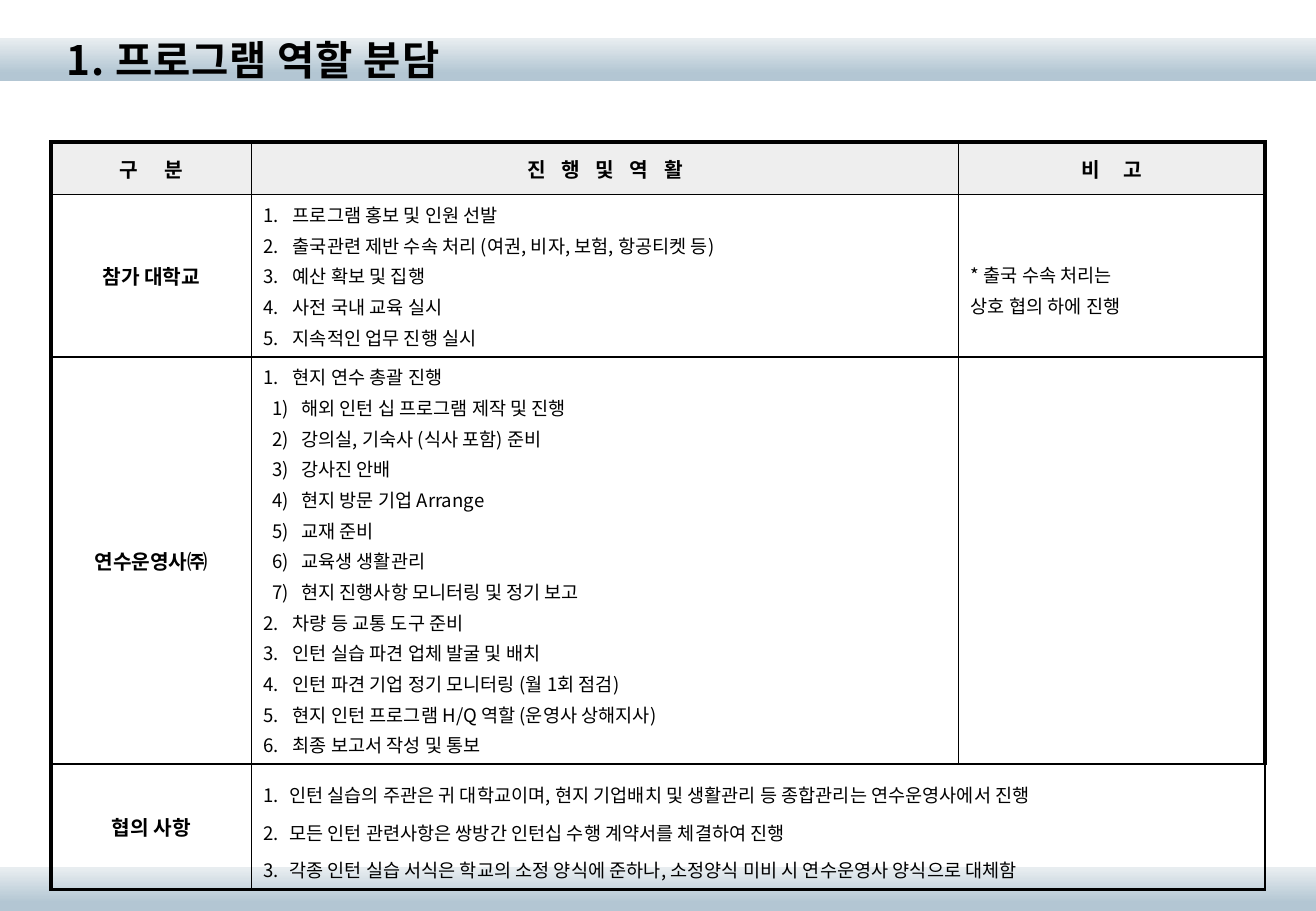
from lxml.etree import SubElement
from pptx import Presentation
from pptx.dml.color import RGBColor
from pptx.enum.shapes import MSO_SHAPE
from pptx.enum.text import MSO_ANCHOR, PP_ALIGN
from pptx.oxml.ns import qn
from pptx.util import Inches, Pt

FONT = "Noto Sans CJK KR"
COLORS = {"text": "000000", "header": "EEEEEE", "band_dark": "B3C6D3", "band_light": "E8EDF0"}
THIN, THICK = Pt(1), Pt(2.25)


def format_runs(paragraph, size, bold=False, spacing=0):
    """Style every run; spacing is the extra gap after each letter in points."""
    for run in paragraph.runs:
        run.font.size = Pt(size)
        run.font.bold = bold
        run.font.name = FONT
        run.font.color.rgb = RGBColor.from_string(COLORS["text"])
        properties = run.font._element
        SubElement(properties, qn("a:ea")).set("typeface", FONT)
        if spacing:
            properties.set("spc", str(round(spacing * 100)))


def number_paragraph(paragraph, number, style, left, hanging):
    properties = paragraph._p.get_or_add_pPr()
    properties.set("marL", str(Inches(left + hanging)))
    properties.set("indent", str(-Inches(hanging)))
    SubElement(properties, qn("a:buFont")).set("typeface", FONT)
    bullet = SubElement(properties, qn("a:buAutoNum"))
    bullet.set("type", style)
    bullet.set("startAt", str(number))


presentation = Presentation()
presentation.slide_width, presentation.slide_height = Inches(10.83), Inches(7.5)
slide = presentation.slides.add_slide(presentation.slide_layouts[6])

# Bands across the top and the foot
band_height = Inches(0.36)
for top in (Inches(0.31), presentation.slide_height - band_height):
    band = slide.shapes.add_shape(MSO_SHAPE.RECTANGLE, 0, top, presentation.slide_width, band_height)
    band.shadow.inherit = False
    band.line.fill.background()
    band.fill.gradient()
    band.fill.gradient_angle = 90
    for stop, position, color in zip(band.fill.gradient_stops, (0.19, 0.98), ("band_dark", "band_light")):
        stop.position = position
        stop.color.rgb = RGBColor.from_string(COLORS[color])

# Table frame
column_widths = (1.65, 5.82, 2.52)
row_heights = (0.43, 1.34, 3.35, 1.02)
table = slide.shapes.add_table(
    len(row_heights), len(column_widths), Inches(0.42), Inches(1.17),
    Inches(sum(column_widths)), Inches(sum(row_heights))).table
table.first_row = table.horz_banding = False
for column, width in zip(table.columns, column_widths):
    column.width = Inches(width)
for row, height in zip(table.rows, row_heights):
    row.height = Inches(height)

last_row, last_column = len(row_heights) - 1, len(column_widths) - 1
for row in range(last_row + 1):
    for column in range(last_column + 1):
        cell = table.cell(row, column)
        cell.vertical_anchor = MSO_ANCHOR.MIDDLE
        outer_sides = {"a:lnL": column == 0, "a:lnR": column == last_column,
                       "a:lnT": row == 0, "a:lnB": row == last_row}
        for side, is_outer in outer_sides.items():
            border = SubElement(cell._tc.get_or_add_tcPr(), qn(side), w=str(THICK if is_outer else THIN))
            SubElement(SubElement(border, qn("a:solidFill")), qn("a:srgbClr")).set("val", COLORS["text"])
        if row == 0:
            cell.fill.solid()
            cell.fill.fore_color.rgb = RGBColor.from_string(COLORS["header"])
        else:
            cell.fill.background()
table.cell(last_row, 1).merge(table.cell(last_row, last_column))

# Column and row headings: row, column, text, letter spacing
headings = [
    (0, 0, "구 분", 6.5), (0, 1, "진 행 및 역 활", 3.3), (0, 2, "비 고", 5.4),
    (1, 0, "참가 대학교", 0), (2, 0, "연수운영사㈜", 0), (3, 0, "협의 사항", 0),
]
for row, column, text, spacing in headings:
    paragraph = table.cell(row, column).text_frame.paragraphs[0]
    paragraph.text = text
    paragraph.alignment = PP_ALIGN.CENTER
    format_runs(paragraph, 12, True, spacing)

# Duties: a nested list holds the steps of the item before it
university_duties = [
    "프로그램 홍보 및 인원 선발",
    "출국관련 제반 수속 처리 (여권, 비자, 보험, 항공티켓 등)",
    "예산 확보 및 집행",
    "사전 국내 교육 실시",
    "지속적인 업무 진행 실시",
]
company_duties = [
    "현지 연수 총괄 진행",
    ["해외 인턴 십 프로그램 제작 및 진행", "강의실, 기숙사 (식사 포함) 준비", "강사진 안배",
     "현지 방문 기업 Arrange", "교재 준비", "교육생 생활관리", "현지 진행사항 모니터링 및 정기 보고"],
    "차량 등 교통 도구 준비",
    "인턴 실습 파견 업체 발굴 및 배치",
    "인턴 파견 기업 정기 모니터링 (월 1회 점검)",
    "현지 인턴 프로그램 H/Q 역할 (운영사 상해지사)",
    "최종 보고서 작성 및 통보",
]
agreements = [
    "인턴 실습의 주관은 귀 대학교이며, 현지 기업배치 및 생활관리 등 종합관리는 연수운영사에서 진행",
    "모든 인턴 관련사항은 쌍방간 인턴십 수행 계약서를 체결하여 진행",
    "각종 인턴 실습 서식은 학교의 소정 양식에 준하나, 소정양식 미비 시 연수운영사 양식으로 대체함",
]
for row, duties in enumerate((university_duties, company_duties, agreements), start=1):
    lines = []
    number = 0
    for duty in duties:
        if isinstance(duty, list):
            lines += [(text, step, "arabicParenR", 0.07) for step, text in enumerate(duty, start=1)]
        else:
            number += 1
            lines.append((duty, number, "arabicPeriod", 0))
    text_frame = table.cell(row, 1).text_frame
    text_frame.text = "\n".join(line[0] for line in lines)
    for index, (paragraph, line) in enumerate(zip(text_frame.paragraphs, lines)):
        if row == last_row:
            paragraph.line_spacing = 1.4
        elif index > 0:
            paragraph.space_before = Pt(2.2)
        number_paragraph(paragraph, *line[1:], hanging=0.21 if row == last_row else 0.24)
        format_runs(paragraph, 11)

# Remark beside the university's duties
remark = table.cell(1, 2)
remark.vertical_anchor = MSO_ANCHOR.TOP
remark.margin_top = Inches(0.55)
remark.text_frame.text = "* 출국 수속 처리는\n상호 협의 하에 진행"
remark.text_frame.paragraphs[1].space_before = Pt(2.2)
for paragraph in remark.text_frame.paragraphs:
    format_runs(paragraph, 11)

# Title
title = slide.shapes.add_textbox(Inches(0.45), Inches(0.24), Inches(3.64), Inches(0.5))
title.text_frame.word_wrap = False
title.text_frame.text = "1. 프로그램 역할 분담"
format_runs(title.text_frame.paragraphs[0], 24, True, 0.5)

presentation.save("out.pptx")
